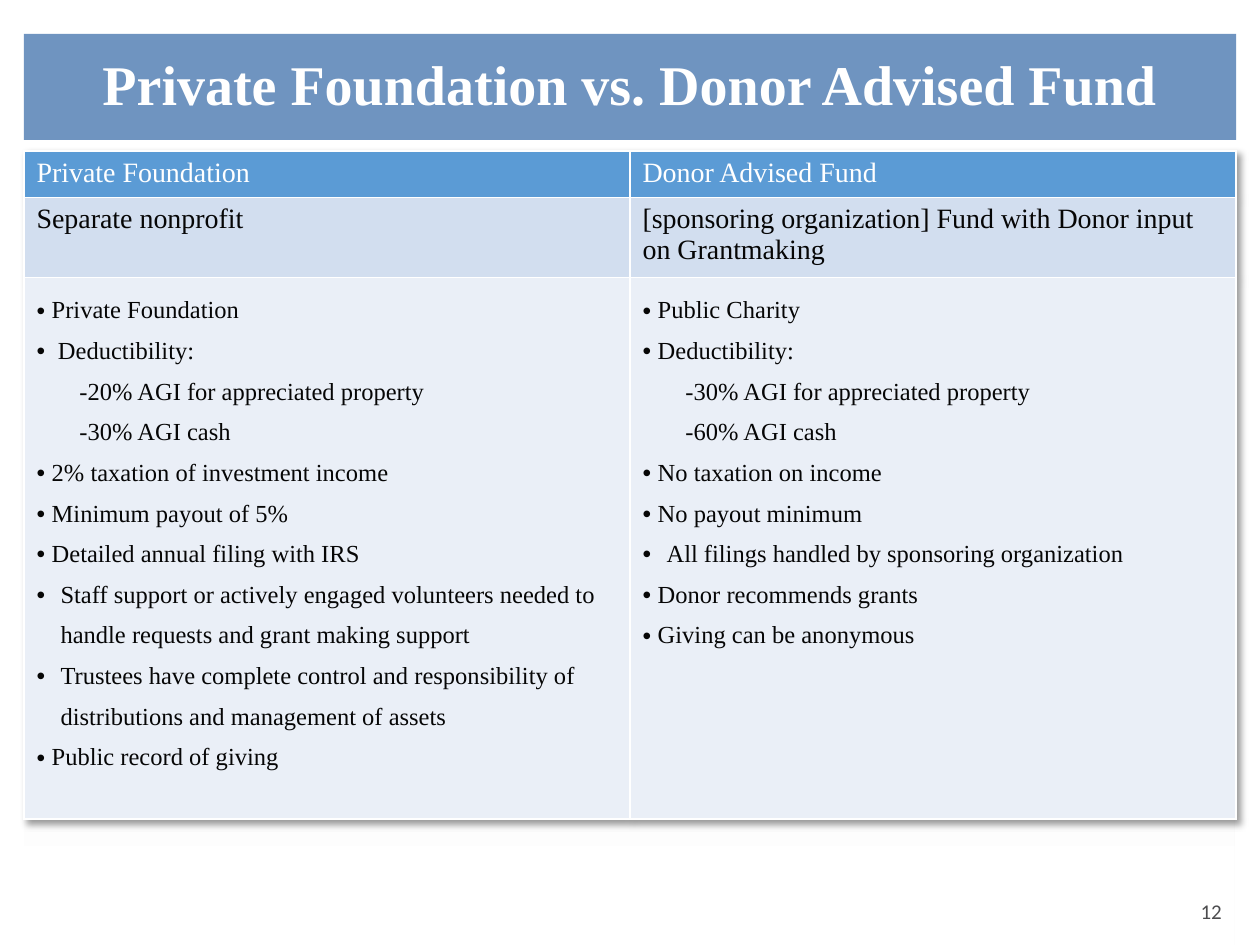
from lxml.etree import SubElement
from pptx import Presentation
from pptx.dml.color import RGBColor
from pptx.enum.shapes import MSO_SHAPE as Shape
from pptx.enum.text import MSO_ANCHOR as Anchor, PP_ALIGN as Align
from pptx.oxml import parse_xml
from pptx.oxml.ns import qn
from pptx.util import Inches, Pt

TITLE = "Private Foundation vs. Donor Advised Fund"
PAGE_NUMBER = "12"
SERIF = "Times New Roman"

# Each detail line: (indent in inches, bulleted, text)
BULLET, LOOSE, WIDE, SUB = (0.12, True), (0.17, True), (0.19, True), (0.34, False)
COLUMNS = [
    ("Private Foundation", "Separate nonprofit", [
        (*BULLET, "Private Foundation"),
        (*LOOSE, "Deductibility:"),
        (*SUB, "-20% AGI for appreciated property"),
        (*SUB, "-30% AGI cash"),
        (*BULLET, "2% taxation of investment income"),
        (*BULLET, "Minimum payout of 5%"),
        (*BULLET, "Detailed annual filing with IRS"),
        (*WIDE, "Staff support or actively engaged volunteers needed to "
                "handle requests and grant making support"),
        (*WIDE, "Trustees have complete control and responsibility of "
                "distributions and management of assets"),
        (*BULLET, "Public record of giving"),
    ]),
    ("Donor Advised Fund",
     "[sponsoring organization] Fund with Donor input on Grantmaking", [
        (*BULLET, "Public Charity"),
        (*BULLET, "Deductibility:"),
        (*SUB, "-30% AGI for appreciated property"),
        (*SUB, "-60% AGI cash"),
        (*BULLET, "No taxation on income"),
        (*BULLET, "No payout minimum"),
        (*WIDE, "All filings handled by sponsoring organization"),
        (*BULLET, "Donor recommends grants"),
        (*BULLET, "Giving can be anonymous"),
    ]),
]
ROW_HEIGHTS = [0.35, 0.61, 4.12]
ROW_FILLS = ["5B9BD5", "D2DEEF", "EAEFF7"]
ROW_INKS = ["FFFFFF", "060606", "060606"]
LEFT, WIDTH = 0.19, 9.62
TABLE_SHADOW = (
    '<a:effectLst xmlns:a="http://schemas.openxmlformats.org/drawingml/2006/main">'
    '<a:outerShdw blurRad="50800" dist="38100" dir="2700000" algn="tl" rotWithShape="0">'
    '<a:srgbClr val="000000"><a:alpha val="40000"/></a:srgbClr>'
    '</a:outerShdw></a:effectLst>')


def color(code):
    return RGBColor.from_string(code)


def add_span(para, text, size, ink, font=SERIF, bold=False):
    span = para.add_run()
    span.text = text
    span.font.name, span.font.size, span.font.bold = font, Pt(size), bold
    span.font.color.rgb = color(ink)


def add_panel(page, *place):
    panel = page.shapes.add_shape(Shape.RECTANGLE, *map(Inches, place))
    panel.shadow.inherit = False
    panel.line.fill.background()
    return panel


def indent(para, inches, bulleted):
    props = para._p.get_or_add_pPr()
    props.set("marL", str(Inches(inches)))
    props.set("indent", str(-Inches(inches) if bulleted else 0))
    if bulleted:
        SubElement(props, qn("a:buFont")).set("typeface", "Arial")
        SubElement(props, qn("a:buChar")).set("char", "•")


deck = Presentation()
deck.slide_width, deck.slide_height = Inches(10), Inches(7.5)
page = deck.slides.add_slide(deck.slide_layouts[6])

# Backdrop fading down to white
backdrop = add_panel(page, LEFT, 1.21, 9.61, 6.29)
backdrop.fill.gradient()
backdrop.fill.gradient_angle = 270
for stop, code in zip(backdrop.fill.gradient_stops, ["F1F0F0", "FFFFFF"]):
    stop.color.rgb = color(code)

# Page number
box = page.shapes.add_textbox(*map(Inches, (9.43, 7.08, 0.75, 0.57)))
box.text_frame.word_wrap = True
add_span(box.text_frame.paragraphs[0], PAGE_NUMBER, 12, "4D4D4F", "Calibri")

# Title banner
banner = add_panel(page, LEFT, 0.27, WIDTH, 0.84)
banner.fill.solid()
banner.fill.fore_color.rgb = color("6F94C0")
frame = banner.text_frame
frame.word_wrap, frame.vertical_anchor = True, Anchor.MIDDLE
frame.margin_left = frame.margin_right = frame.margin_top = frame.margin_bottom = 0
para = frame.paragraphs[0]
para.alignment, para.line_spacing = Align.CENTER, 0.9
add_span(para, TITLE, 32, "FFFFFF", bold=True)

# Comparison table
holder = page.shapes.add_table(
    len(ROW_HEIGHTS), len(COLUMNS),
    *map(Inches, (LEFT, 1.2, WIDTH, sum(ROW_HEIGHTS))))
table = holder.table
table._tbl.tblPr.insert(0, parse_xml(TABLE_SHADOW))
for row, height in zip(table.rows, ROW_HEIGHTS):
    row.height = Inches(height)

for col, (heading, summary, details) in enumerate(COLUMNS):
    table.columns[col].width = Inches(WIDTH / len(COLUMNS))
    for row, (fill, ink) in enumerate(zip(ROW_FILLS, ROW_INKS)):
        cell = table.cell(row, col)
        cell.fill.solid()
        cell.fill.fore_color.rgb = color(fill)
        frame = cell.text_frame
        if row < 2:
            add_span(frame.paragraphs[0], (heading, summary)[row], 16, ink)
            continue
        for number, (inches, bulleted, text) in enumerate(details):
            para = frame.add_paragraph() if number else frame.paragraphs[0]
            indent(para, inches, bulleted)
            para.line_spacing = 1.5
            add_span(para, text, 14, ink)

deck.save("out.pptx")
